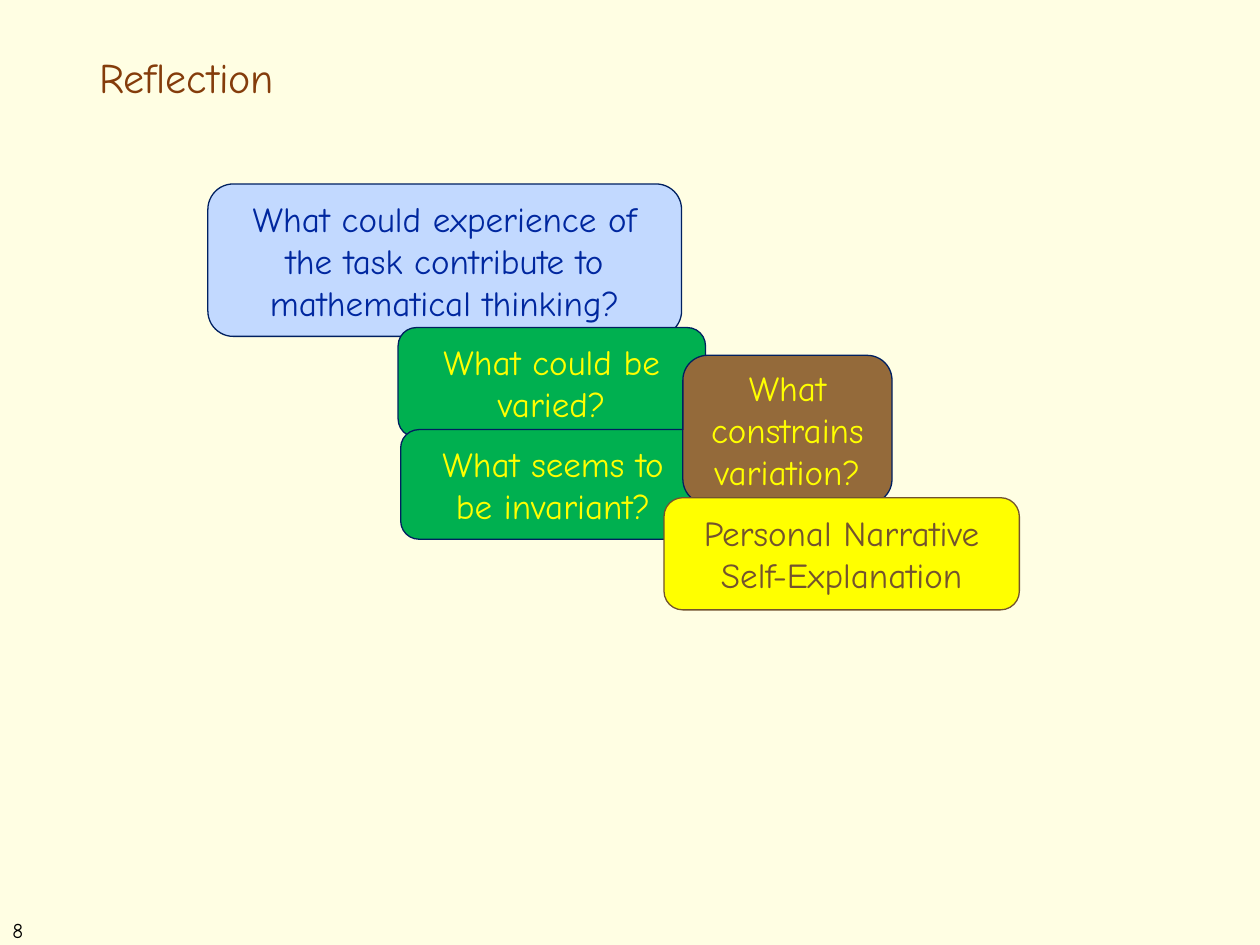
from pptx import Presentation
from pptx.dml.color import RGBColor
from pptx.enum.shapes import MSO_SHAPE as Shape
from pptx.enum.text import MSO_ANCHOR as Anchor, PP_ALIGN as Align
from pptx.util import Inches, Pt

FONT = "Comic Neue"
NAVY, GREEN, YELLOW, BROWN = "002060", "00B050", "FFFF00", "73532E"

LABELS = [
    ("8", (0, 7.23, 0.49, 0.3), 12, "000000", 1),
    ("Reflection", (0.69, 0.4, 8.62, 0.47), 24, "843C0B", 0.9),
]
CARDS = [
    (["What could experience of the task contribute to mathematical thinking?"],
     (1.65, 1.46, 3.76, 1.21), "C2D9FF", NAVY, "00279F"),
    (["What could be varied?"], (3.16, 2.6, 2.44, 0.87), GREEN, NAVY, YELLOW),
    (["What seems to be invariant?"], (3.18, 3.41, 2.42, 0.87), GREEN, NAVY, YELLOW),
    (["What constrains variation?"], (5.42, 2.82, 1.66, 1.18), "946A3A", NAVY, YELLOW),
    (["Personal Narrative", "Self-Explanation"],
     (5.27, 3.95, 2.82, 0.89), YELLOW, BROWN, BROWN),
]


def color(value):
    return RGBColor.from_string(value)


def write(shape, lines, size, ink, align, spacing=1):
    frame = shape.text_frame
    frame.word_wrap = True
    frame.vertical_anchor = Anchor.MIDDLE
    for index, line in enumerate(lines):
        para = frame.add_paragraph() if index else frame.paragraphs[0]
        para.alignment = align
        para.line_spacing = spacing
        span = para.add_run()
        span.text = line
        span.font.name = FONT
        span.font.size = Pt(size)
        span.font.color.rgb = color(ink)


def add_label(page, text, place, size, ink, spacing):
    box = page.shapes.add_textbox(*map(Inches, place))
    write(box, [text], size, ink, Align.LEFT, spacing)


def add_card(page, lines, place, fill, outline, ink):
    card = page.shapes.add_shape(Shape.ROUNDED_RECTANGLE, *map(Inches, place))
    card.shadow.inherit = False
    card.fill.solid()
    card.fill.fore_color.rgb = color(fill)
    card.line.color.rgb = color(outline)
    card.line.width = Pt(0.75)
    write(card, lines, 20, ink, Align.CENTER)


def main():
    deck = Presentation()
    deck.slide_width, deck.slide_height = Inches(10), Inches(7.5)
    page = deck.slides.add_slide(deck.slide_layouts[6])
    page.background.fill.solid()
    page.background.fill.fore_color.rgb = color("FFFEE3")
    for label in LABELS:
        add_label(page, *label)
    for card in CARDS:
        add_card(page, *card)
    deck.save("out.pptx")


if __name__ == "__main__":
    main()
